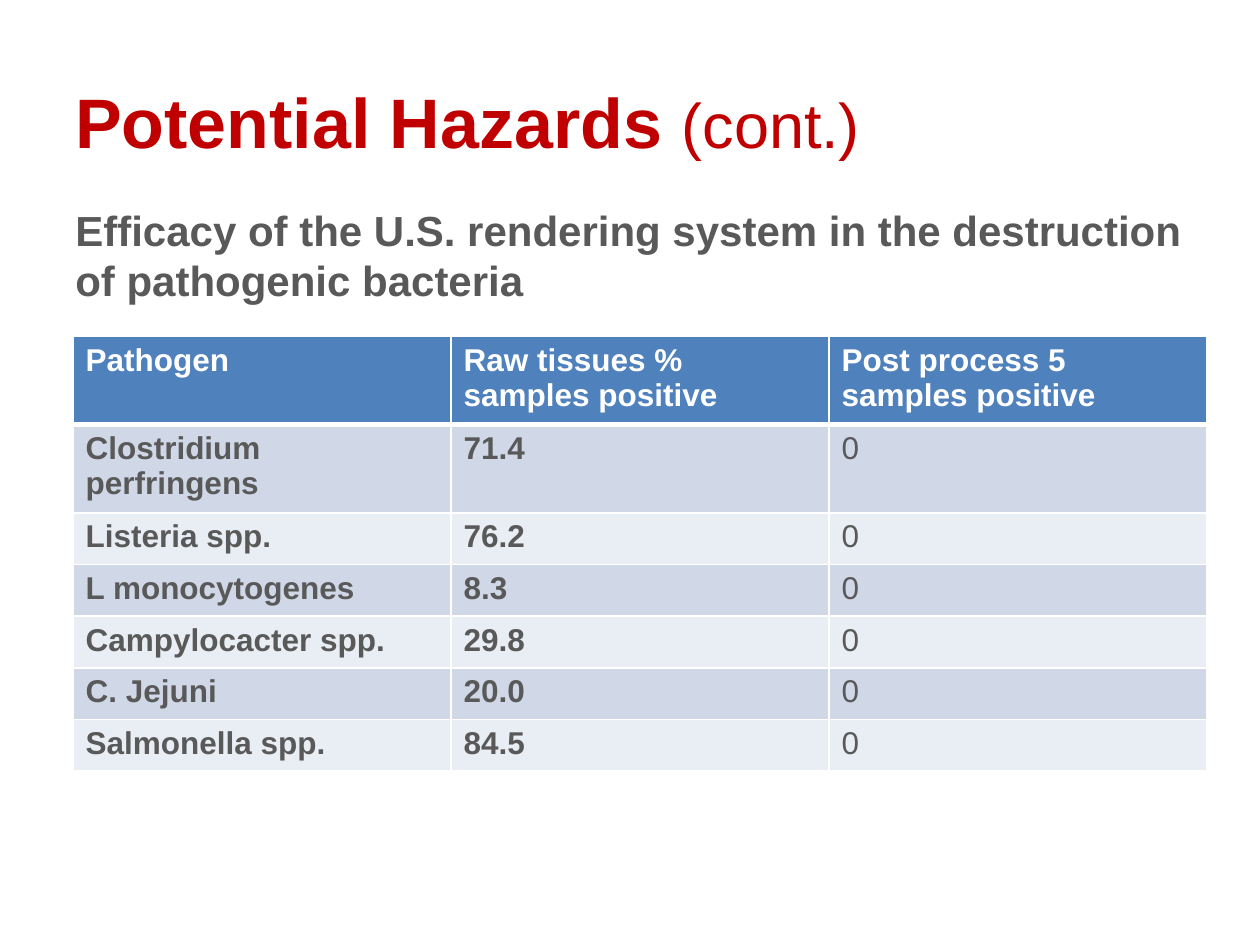
from dataclasses import dataclass
from lxml import etree
from pptx import Presentation
from pptx.dml.color import RGBColor
from pptx.enum.text import MSO_ANCHOR
from pptx.oxml.ns import qn
from pptx.util import Inches, Pt

BOTTOM = MSO_ANCHOR.BOTTOM
TOP = MSO_ANCHOR.TOP


@dataclass(frozen=True)
class Theme:
    font: str = "Arial"
    red: str = "C00000"
    gray: str = "595959"
    white: str = "FFFFFF"
    header: str = "4F81BD"
    bands: tuple = ("D0D8E8", "E9EDF4")
    title_size: int = 40
    suffix_size: int = 36
    body_size: int = 24
    table_size: int = 18


theme = Theme()


def add_span(para, text, size, color, bold):
    span = para.add_run()
    span.text = text
    span.font.name = theme.font
    span.font.size = Pt(size)
    span.font.bold = bold
    span.font.color.rgb = RGBColor.from_string(color)


def add_border(cell, side, width):
    line = etree.SubElement(cell._tc.get_or_add_tcPr(), qn(f"a:{side}"), w=str(Pt(width)))
    fill = etree.SubElement(line, qn("a:solidFill"))
    etree.SubElement(fill, qn("a:srgbClr"), val=theme.white)


deck = Presentation()
deck.slide_width = Inches(10)
deck.slide_height = Inches(7.5)
page = deck.slides.add_slide(deck.slide_layouts[6])

texts = [
    (0.42, 0.92, BOTTOM, 0.05, [
        ("Potential Hazards ", theme.title_size, theme.red, True),
        ("(cont.)", theme.suffix_size, theme.red, False),
    ]),
    (1.54, 1, TOP, 0.08, [
        ("Efficacy of the U.S. rendering system in the destruction of pathogenic bacteria",
         theme.body_size, theme.gray, True),
    ]),
]
for top, height, anchor, inset, spans in texts:
    box = page.shapes.add_textbox(Inches(0.5), Inches(top), Inches(9), Inches(height))
    frame = box.text_frame
    frame.word_wrap = True
    frame.vertical_anchor = anchor
    frame.margin_top = Inches(inset)
    for span in spans:
        add_span(frame.paragraphs[0], *span)

rows = [
    ("Pathogen", "Raw tissues % samples positive", "Post process 5 samples positive"),
    ("Clostridium perfringens", "71.4", "0"),
    ("Listeria spp.", "76.2", "0"),
    ("L monocytogenes", "8.3", "0"),
    ("Campylocacter spp.", "29.8", "0"),
    ("C. Jejuni", "20.0", "0"),
    ("Salmonella spp.", "84.5", "0"),
]
row_height = Inches(0.41)
table = page.shapes.add_table(
    len(rows), 3, Inches(0.58), Inches(2.67), Inches(9), row_height * len(rows)
).table
for row_index, values in enumerate(rows):
    is_header = row_index == 0
    table.rows[row_index].height = row_height
    fill_color = theme.header if is_header else theme.bands[(row_index - 1) % 2]
    text_color = theme.white if is_header else theme.gray
    for column_index, value in enumerate(values):
        cell = table.cell(row_index, column_index)
        for side in ("lnL", "lnR", "lnT", "lnB"):
            thick = (is_header and side == "lnB") or (row_index == 1 and side == "lnT")
            add_border(cell, side, 3 if thick else 1)
        cell.fill.solid()
        cell.fill.fore_color.rgb = RGBColor.from_string(fill_color)
        bold = is_header or column_index < 2
        add_span(cell.text_frame.paragraphs[0], value, theme.table_size, text_color, bold)

deck.save("out.pptx")
